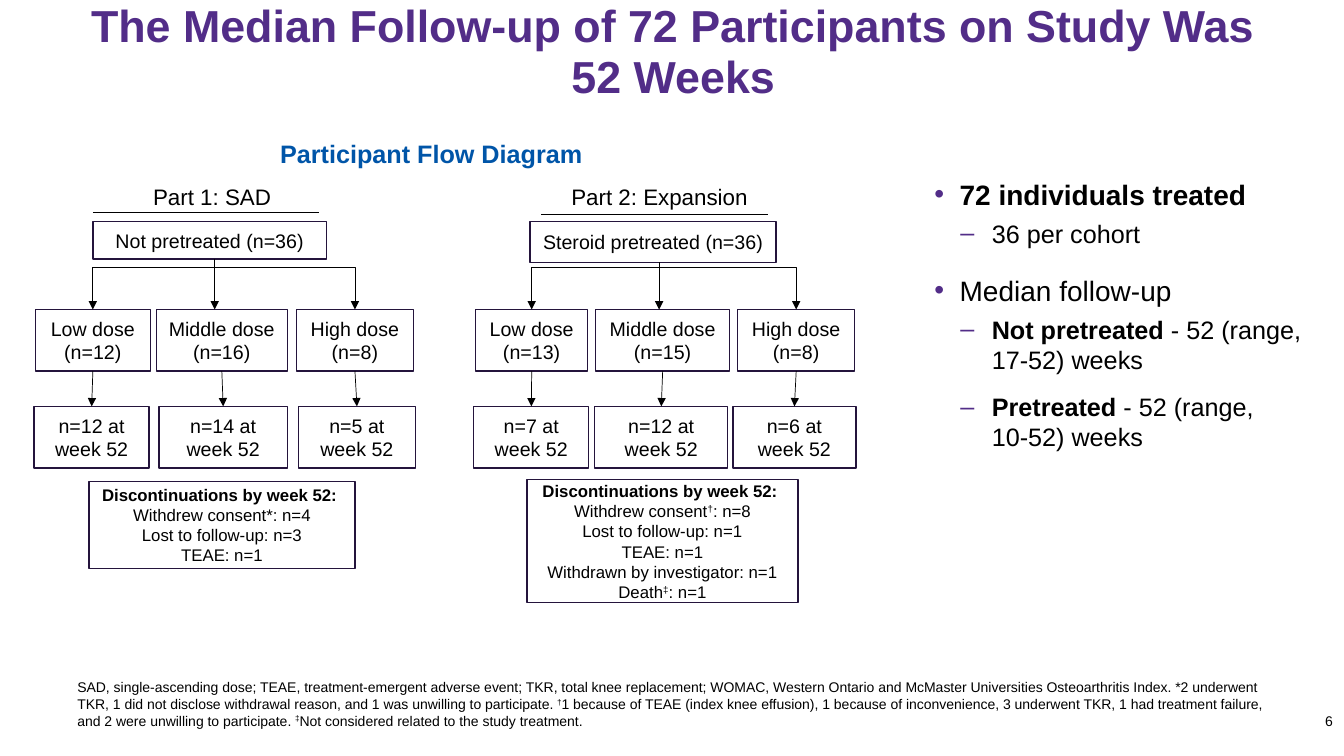
from lxml import etree
from pptx import Presentation
from pptx import util as u
from pptx.dml.color import RGBColor
from pptx.enum import shapes, text
from pptx.oxml import ns

Cm, Pt = u.Cm, u.Pt
PURPLE = RGBColor(0x52, 0x2D, 0x88)
BLUE = RGBColor(0x00, 0x55, 0xA8)
BORDER = RGBColor(0x24, 0x14, 0x3C)
BLACK = RGBColor(0, 0, 0)
LEFT, CENTER, RIGHT = text.PP_ALIGN.LEFT, text.PP_ALIGN.CENTER, text.PP_ALIGN.RIGHT
TOP, MIDDLE, BOTTOM = text.MSO_ANCHOR.TOP, text.MSO_ANCHOR.MIDDLE, text.MSO_ANCHOR.BOTTOM

HEADLINE = "The Median Follow-up of 72 Participants on Study Was \n52 Weeks "
DIAGRAM_TITLE = "Participant Flow Diagram"
PAGE = "6"

# Each piece is (wording, style): "b" bold, "^" superscript
FINDINGS = [
    (0, 10, [("72 individuals treated", "b")]),
    (1, 5, [("36 per cohort", "")]),
    (0, 18, [("Median follow-up", "")]),
    (1, 5, [("Not pretreated ", "b"), ("- 52 (range, 17-52) weeks", "")]),
    (1, 12, [("Pretreated", "b"), (" - 52 (range, \n10-52) weeks", "")]),
]
LEVELS = [
    {"size": 20, "bullet": "•", "margin": 0.64, "hanging": 0.64},
    {"size": 18, "bullet": "‒", "margin": 1.45, "hanging": 0.79},
]
FOOTNOTE = [
    ("SAD, single-ascending dose; TEAE, treatment-emergent adverse event; TKR, total knee "
     "replacement; WOMAC, Western Ontario and McMaster Universities Osteoarthritis Index. "
     "*2 underwent TKR, 1 did not disclose withdrawal reason, and 1 was unwilling to "
     "participate. ", ""),
    ("†", "^"),
    ("1 because of TEAE (index knee effusion), 1 because of inconvenience, 3 underwent TKR, "
     "1 had treatment failure, and 2 were unwilling to participate. ", ""),
    ("‡", "^"),
    ("Not considered related to the study treatment.", ""),
]
DISCONTINUED = [("Discontinuations by week 52: ", "b")]
PARTS = [
    {
        "heading": ("Part 1: SAD", (3.61, 4.5, 3.53, 0.94)),
        "rule": (2.34, 5.36),
        "cohort": ("Not pretreated (n=36)", (2.34, 5.59, 5.89, 0.94)),
        "stem": 5.41,
        "doses": [("Low dose (n=12)", 0.89, 2.9), ("Middle dose (n=16)", 3.94, 3.3),
                  ("High dose (n=8)", 7.47, 2.95)],
        "weeks": [("n=12 at week 52", 0.86, 2.9), ("n=14 at week 52", 4.01, 3.23),
                  ("n=5 at week 52", 7.52, 2.95)],
        "losses": ([DISCONTINUED, [("Withdrew consent*: n=4", "")],
                    [("Lost to follow-up: n=3", "")], [("TEAE: n=1", "")]],
                   (2.24, 12.14, 6.71, 2.18)),
    },
    {
        "heading": ("Part 2: Expansion", (14.15, 4.5, 5, 0.94)),
        "rule": (13.64, 5.41),
        "cohort": ("Steroid pretreated (n=36)", (13.36, 5.59, 6.2, 1.02)),
        "stem": 16.61,
        "doses": [("Low dose (n=13)", 11.99, 2.82), ("Middle dose (n=15)", 15.01, 3.38),
                  ("High dose (n=8)", 18.59, 2.95)],
        "weeks": [("n=7 at week 52", 11.94, 2.9), ("n=12 at week 52", 14.99, 3.35),
                  ("n=6 at week 52", 18.47, 3.1)],
        "losses": ([DISCONTINUED, [("Withdrew consent", ""), ("†", "^"), (": n=8", "")],
                    [("Lost to follow-up: n=1", "")], [("TEAE: n=1", "")],
                    [("Withdrawn by investigator: n=1", "")],
                    [("Death", ""), ("‡", "^"), (": n=1", "")]],
                   (13.28, 12.09, 6.83, 3.1)),
    },
]
RULE_WIDTH = 5.71
BRANCH_TOP, DOSE_TOP, WEEK_TOP, BOX_HEIGHT = 6.73, 7.8, 10.24, 1.55

deck = Presentation()
deck.slide_width, deck.slide_height = Cm(33.87), Cm(19.05)
slide = deck.slides.add_slide(deck.slide_layouts[1])


def place(holder, area):
    holder.left, holder.top, holder.width, holder.height = map(Cm, area)


def write(paragraph, pieces, size, color=BLACK, align=LEFT):
    paragraph.alignment = align
    for wording, style in pieces:
        for number, line in enumerate(wording.split("\n")):
            if number:
                paragraph.add_line_break()
            run = paragraph.add_run()
            run.text = line
            font = run.font
            font.name, font.size, font.bold = "Arial", Pt(size), style == "b"
            font.color.rgb = color
            if style == "^":
                font._element.set("baseline", "30000")


def fill_frame(frame, paragraphs, size, color=BLACK, align=LEFT, anchor=TOP, wrap=True):
    frame.word_wrap = wrap
    frame.auto_size = text.MSO_AUTO_SIZE.NONE
    frame.vertical_anchor = anchor
    for number, pieces in enumerate(paragraphs):
        paragraph = frame.add_paragraph() if number else frame.paragraphs[0]
        write(paragraph, pieces, size, color, align)


def label(area, pieces, size, **style):
    box = slide.shapes.add_textbox(*map(Cm, area))
    fill_frame(box.text_frame, [pieces], size, **style)
    return box.text_frame


def flow_box(area, paragraphs, size=14):
    box = slide.shapes.add_shape(shapes.MSO_SHAPE.RECTANGLE, *map(Cm, area))
    box.shadow.inherit = False
    box.fill.background()
    box.line.color.rgb, box.line.width = BORDER, Pt(1)
    fill_frame(box.text_frame, paragraphs, size, align=CENTER, anchor=MIDDLE)
    return box


def link(x1, y1, x2, y2, arrow=True, bent=False):
    kind = shapes.MSO_CONNECTOR.ELBOW if bent else shapes.MSO_CONNECTOR.STRAIGHT
    line = slide.shapes.add_connector(kind, *map(Cm, (x1, y1, x2, y2)))
    line.line.color.rgb, line.line.width = BLACK, Pt(0.5)
    properties = line._element.spPr
    if bent:
        properties.find(ns.qn("a:prstGeom")).set("prst", "bentConnector2")
    if arrow:
        etree.SubElement(properties.find(ns.qn("a:ln")), ns.qn("a:tailEnd"), type="triangle")
    etree.SubElement(properties, ns.qn("a:effectLst"))
    return line


def add_bullet(paragraph, level):
    properties = paragraph._p.get_or_add_pPr()
    properties.set("marL", str(Cm(level["margin"])))
    properties.set("indent", str(-Cm(level["hanging"])))
    color = etree.SubElement(properties, ns.qn("a:buClr"))
    etree.SubElement(color, ns.qn("a:srgbClr"), val=str(PURPLE))
    etree.SubElement(properties, ns.qn("a:buFont"), typeface="Arial")
    etree.SubElement(properties, ns.qn("a:buChar"), char=level["bullet"])


def draw_part(part):
    heading, heading_area = part["heading"]
    label(heading_area, [(heading, "")], 16, wrap=False)
    rule_x, rule_y = part["rule"]
    link(rule_x, rule_y, rule_x + RULE_WIDTH, rule_y, arrow=False)

    cohort, cohort_area = part["cohort"]
    flow_box(cohort_area, [[(cohort, "")]])
    doses, weeks = [
        [flow_box((x, top, width, BOX_HEIGHT), [[(wording, "")]]) for wording, x, width in part[row]]
        for row, top in (("doses", DOSE_TOP), ("weeks", WEEK_TOP))
    ]
    stem = part["stem"]
    link(stem, cohort_area[1] + cohort_area[3], stem, DOSE_TOP)
    for dose, (_, x, width) in list(zip(doses, part["doses"]))[::2]:
        link(stem, BRANCH_TOP, x + width / 2, DOSE_TOP, bent=True).end_connect(dose, 0)
    for dose, week in zip(doses, weeks):
        arrow = link(0, DOSE_TOP, 0, WEEK_TOP)
        arrow.begin_connect(dose, 2)
        arrow.end_connect(week, 0)

    losses, losses_area = part["losses"]
    flow_box(losses_area, losses, 12)


def main():
    title, body = slide.placeholders
    place(title, (1.35, 0.08, 31.55, 2.62))
    fill_frame(title.text_frame, [[(HEADLINE, "b")]], 32, PURPLE, CENTER, BOTTOM)
    title.text_frame.paragraphs[0].line_spacing = Pt(36)

    place(body, (23.29, 4.34, 9.93, 11.99))
    findings = body.text_frame
    fill_frame(findings, [[] for _ in FINDINGS], 20)
    for paragraph, (depth, before, pieces) in zip(findings.paragraphs, FINDINGS):
        write(paragraph, pieces, LEVELS[depth]["size"])
        paragraph.level = depth
        paragraph.space_before = Pt(before)
        add_bullet(paragraph, LEVELS[depth])

    for part in PARTS:
        draw_part(part)
    label((6.81, 3.35, 8.41, 1.02), [(DIAGRAM_TITLE, "b")], 18, color=BLUE)
    footer = label((1.7, 17.68, 30.51, 0.69), FOOTNOTE, 10, anchor=BOTTOM)
    page = label((32.21, 17.37, 1.63, 1.02), [(PAGE, "")], 10, align=RIGHT, anchor=BOTTOM)
    footer.margin_bottom = page.margin_bottom = 0
    deck.save("out.pptx")


if __name__ == "__main__":
    main()
